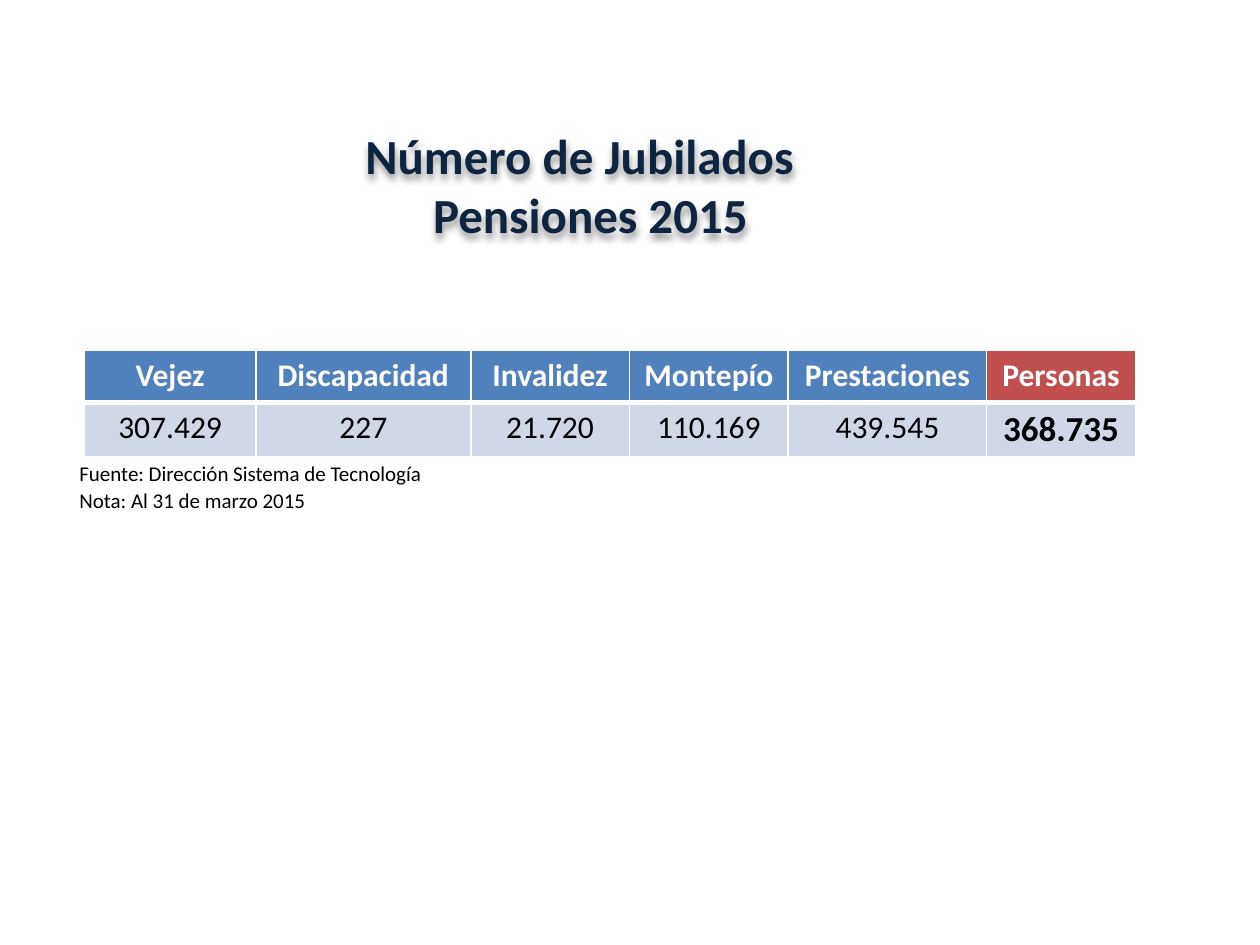
from dataclasses import dataclass

from lxml import etree
from pptx import Presentation
from pptx.dml.color import RGBColor
from pptx.enum.text import MSO_ANCHOR, MSO_AUTO_SIZE, PP_ALIGN
from pptx.oxml.ns import qn
from pptx.util import Cm, Pt


@dataclass(frozen=True)
class Theme:
    font: str = "Calibri"
    navy: str = "0F243E"
    blue: str = "4F81BD"
    red: str = "C0504D"
    pale: str = "D0D8E8"
    white: str = "FFFFFF"
    black: str = "000000"
    title_size: int = 28
    total_size: int = 20
    table_size: int = 18
    note_size: int = 12


THEME = Theme()

# Heading, number of people, column width in cm
PENSIONS = [
    ("Vejez", "307.429", 3.46),
    ("Discapacidad", "227", 4.33),
    ("Invalidez", "21.720", 3.2),
    ("Montepío", "110.169", 3.2),
    ("Prestaciones", "439.545", 4),
    ("Personas", "368.735", 3),
]


def write_text(text_frame, text, *, size, color, bold=False,
               align=PP_ALIGN.LEFT, line_spacing=None, indents=()):
    """Write one paragraph per line; indents holds a left margin for each."""
    text_frame.text = text
    for paragraph in text_frame.paragraphs:
        paragraph.alignment = align
        paragraph.line_spacing = line_spacing
        for run in paragraph.runs:
            run.font.name = THEME.font
            run.font.size = Pt(size)
            run.font.bold = bold
            run.font.color.rgb = RGBColor.from_string(color)
    for paragraph, indent in zip(text_frame.paragraphs, indents):
        properties = paragraph._p.get_or_add_pPr()
        properties.set("marL", str(indent))
        properties.set("indent", "0")


def add_soft_shadow(shape):
    effects = etree.SubElement(shape._element.spPr, qn("a:effectLst"))
    shadow = etree.SubElement(effects, qn("a:outerShdw"), blurRad=str(Pt(4)),
                              dist=str(Pt(3)), dir="5400000", algn="t",
                              rotWithShape="0")
    color = etree.SubElement(shadow, qn("a:prstClr"), val="black")
    etree.SubElement(color, qn("a:alpha"), val="40000")


def set_borders(cell, **widths):
    """Draw white cell borders, with widths in points by side."""
    properties = cell._tc.get_or_add_tcPr()
    for position, (side, width) in enumerate(widths.items()):
        line = etree.Element(qn(f"a:ln{side}"), w=str(Pt(width)))
        fill = etree.SubElement(line, qn("a:solidFill"))
        etree.SubElement(fill, qn("a:srgbClr"), val=THEME.white)
        properties.insert(position, line)


def format_cell(cell, text, fill, **text_format):
    cell.fill.solid()
    cell.fill.fore_color.rgb = RGBColor.from_string(fill)
    write_text(cell.text_frame, text, align=PP_ALIGN.CENTER, **text_format)


def set_title(slide):
    title = slide.shapes.title
    title.left, title.top = Cm(1.3), Cm(2.39)
    title.width, title.height = Cm(21.2), Cm(2.64)
    frame = title.text_frame
    frame.auto_size = MSO_AUTO_SIZE.NONE
    frame.vertical_anchor = MSO_ANCHOR.MIDDLE
    # The first line is centred slightly to the left of the second.
    offset = Cm(0.44)
    frame.margin_right = Cm(0.25) + offset
    write_text(frame, "Número de Jubilados\nPensiones 2015",
               size=THEME.title_size, color=THEME.navy, bold=True,
               align=PP_ALIGN.CENTER, indents=(0, offset))
    add_soft_shadow(title)


def add_pension_table(slide):
    row_height = Cm(1.05)
    table_width = Cm(sum(width for _, _, width in PENSIONS))
    table = slide.shapes.add_table(2, len(PENSIONS), Cm(1.7), Cm(7.06),
                                   table_width, 2 * row_height).table
    for row in table.rows:
        row.height = row_height
    for index, (heading, people, width) in enumerate(PENSIONS):
        is_total = index == len(PENSIONS) - 1
        table.columns[index].width = Cm(width)
        header, value = table.cell(0, index), table.cell(1, index)
        format_cell(header, heading, THEME.red if is_total else THEME.blue,
                    size=THEME.table_size, color=THEME.white, bold=True)
        format_cell(value, people, THEME.pale,
                    size=THEME.total_size if is_total else THEME.table_size,
                    color=THEME.black, bold=is_total)
        set_borders(header, L=1, R=1, T=1, B=3)
        set_borders(value, L=1, R=1, T=3, B=1)


def add_source_note(slide):
    box = slide.shapes.add_textbox(Cm(0.08), Cm(9.12), Cm(18.6), Cm(1.35))
    box.text_frame.word_wrap = True
    write_text(box.text_frame,
               "Fuente: Dirección Sistema de Tecnología\n"
               "Nota: Al 31 de marzo 2015",
               size=THEME.note_size, color=THEME.black, line_spacing=1.07,
               indents=(Cm(1.27), Cm(1.27)))


def main():
    presentation = Presentation()
    presentation.slide_width, presentation.slide_height = Cm(25.4), Cm(19.05)
    title_only = presentation.slide_layouts[5]
    slide = presentation.slides.add_slide(title_only)
    set_title(slide)
    add_source_note(slide)
    add_pension_table(slide)
    presentation.save("out.pptx")


if __name__ == "__main__":
    main()
